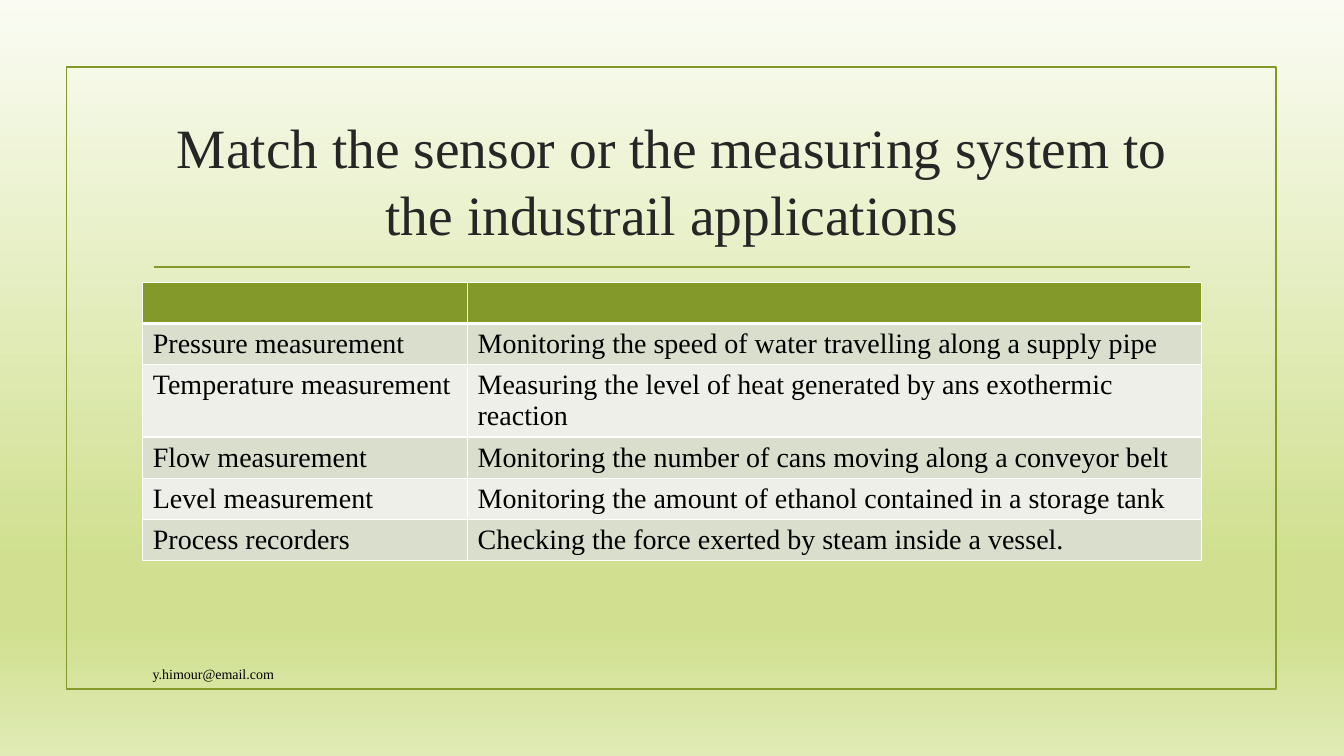
from lxml import etree
from pptx import Presentation
from pptx.dml.color import RGBColor
from pptx.enum.shapes import MSO_CONNECTOR as Connector, MSO_SHAPE as Shape
from pptx.enum.text import MSO_ANCHOR as Anchor, MSO_AUTO_SIZE as AutoSize, PP_ALIGN as Align
from pptx.oxml.ns import qn
from pptx.util import Pt

# Content
TITLE = "Match the sensor or the measuring system to the industrail applications"
CONTACT = "y.himour@email.com"
ROWS = [
    ("", ""),
    ("Pressure measurement", "Monitoring the speed of water travelling along a supply pipe"),
    ("Temperature measurement", "Measuring the level of heat generated by ans exothermic reaction"),
    ("Flow measurement", "Monitoring the number of cans moving along a conveyor belt"),
    ("Level measurement", "Monitoring the amount of ethanol contained in a storage tank"),
    ("Process recorders", "Checking the force exerted by steam inside a vessel."),
]

# Style
FONT = "Times New Roman"
OLIVE = RGBColor(0x83, 0x99, 0x2A)
DARK = RGBColor(0x26, 0x26, 0x26)
BLACK = RGBColor(0, 0, 0)
WHITE = RGBColor(0xFF, 0xFF, 0xFF)
BANDS = (RGBColor(0xED, 0xEF, 0xE8), RGBColor(0xD9, 0xDE, 0xCD))
BACKGROUND = [
    (0, RGBColor(0xFA, 0xFC, 0xF3)),
    (74, RGBColor(0xD0, 0xE0, 0x90)),
    (83, RGBColor(0xD0, 0xE0, 0x90)),
    (100, RGBColor(0xE0, 0xEB, 0xB5)),
]

# Layout in points
LEFT, WIDTH = 102, 756
COLUMNS = (232, 524)
ROW_HEIGHT, TALL_ROW_HEIGHT, TALL_ROW = 29.5, 51.5, 2


def style(font, size, color):
    font.name, font.size = FONT, Pt(size)
    font.color.rgb = color


def add_color(parent, color):
    etree.SubElement(parent, qn("a:srgbClr"), val=str(color))


def set_border(cell, side, width):
    line = etree.SubElement(cell._tc.get_or_add_tcPr(), qn(f"a:ln{side}"), w=str(Pt(width)))
    add_color(etree.SubElement(line, qn("a:solidFill")), WHITE)


deck = Presentation()
deck.slide_width, deck.slide_height = Pt(960), Pt(540)
page = deck.slides.add_slide(deck.slide_layouts[5])

# Background gradient, top to bottom
backdrop = page.background.fill
backdrop.gradient()
backdrop.gradient_angle = 270
stops = page._element.find(".//" + qn("a:gsLst"))
for stop in list(stops):
    stops.remove(stop)
for percent, color in BACKGROUND:
    add_color(etree.SubElement(stops, qn("a:gs"), pos=str(percent * 1000)), color)

# Frame and rule under the title
frame = page.shapes.add_shape(Shape.RECTANGLE, Pt(47.5), Pt(48), Pt(864), Pt(444))
frame.shadow.inherit = False
frame.fill.background()
rule = page.shapes.add_connector(Connector.STRAIGHT, Pt(110), Pt(190.8), Pt(850), Pt(190.8))
etree.SubElement(rule._element.spPr, qn("a:effectLst"))
for outline in (frame.line, rule.line):
    outline.color.rgb = OLIVE
    outline.width = Pt(1.25)
# a:ln must precede a:effectLst
rule._element.spPr.append(rule._element.spPr.find(qn("a:effectLst")))

# Title
title = page.shapes.title
title.left, title.top, title.width, title.height = Pt(LEFT), Pt(77), Pt(WIDTH), Pt(103)
title.text_frame.text = TITLE
title.text_frame.word_wrap = True
title.text_frame.auto_size = AutoSize.NONE
title.text_frame.vertical_anchor = Anchor.MIDDLE
heading = title.text_frame.paragraphs[0]
heading.alignment = Align.CENTER
style(heading.runs[0].font, 39.6, DARK)

# Matching table
heights = [TALL_ROW_HEIGHT if i == TALL_ROW else ROW_HEIGHT for i in range(len(ROWS))]
table = page.shapes.add_table(
    len(ROWS), len(COLUMNS), Pt(LEFT), Pt(201.6), Pt(WIDTH), Pt(sum(heights))
).table
for column, width in zip(table.columns, COLUMNS):
    column.width = Pt(width)
for index, (texts, height) in enumerate(zip(ROWS, heights)):
    table.rows[index].height = Pt(height)
    for cell, text in zip(table.rows[index].cells, texts):
        cell.text = text
        style(cell.text_frame.paragraphs[0].font, 20 if text else 18, BLACK)
        for side in "LRTB":
            header_edge = (index, side) in ((0, "B"), (1, "T"))
            set_border(cell, side, 3 if header_edge else 1)
        cell.fill.solid()
        cell.fill.fore_color.rgb = BANDS[index % 2] if index else OLIVE

# Contact line
box = page.shapes.add_textbox(Pt(LEFT), Pt(470), Pt(575), Pt(22.5))
box.text_frame.word_wrap = True
box.text_frame.vertical_anchor = Anchor.MIDDLE
box.text_frame.text = CONTACT
style(box.text_frame.paragraphs[0].runs[0].font, 10, BLACK)

deck.save("out.pptx")
